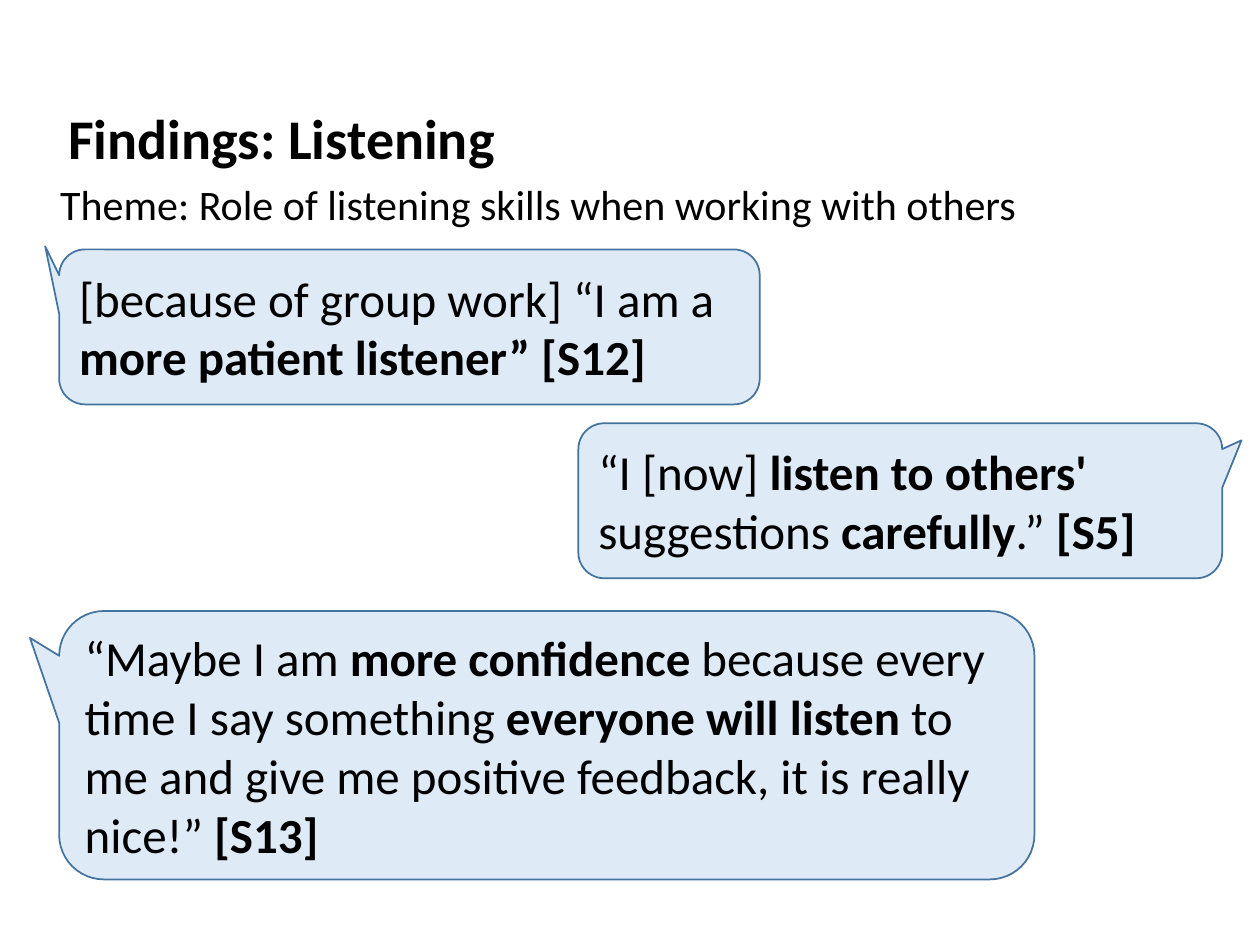
import dataclasses

import pptx
import pptx.dml.color
import pptx.enum.shapes
import pptx.enum.text
import pptx.util

Pt = pptx.util.Pt
RGB = pptx.dml.color.RGBColor.from_string
ANCHOR = pptx.enum.text.MSO_ANCHOR


@dataclasses.dataclass(frozen=True)
class Theme:
    """Colours, font and type sizes of the slide."""
    font: str = "Calibri"
    ink: str = "000000"
    fill: str = "DEEBF7"
    line: str = "43739E"
    title: int = 32
    topic: int = 24
    quote: int = 28


THEME = Theme()


def write(frame, runs, size, anchor=ANCHOR.TOP):
    """Fill a frame with one left-aligned paragraph of (text, bold) runs."""
    frame.word_wrap = True
    frame.vertical_anchor = anchor
    para = frame.paragraphs[0]
    para.alignment = pptx.enum.text.PP_ALIGN.LEFT
    for text, bold in runs:
        run = para.add_run()
        run.text = text
        run.font.name = THEME.font
        run.font.size = Pt(size)
        run.font.bold = bold
        run.font.color.rgb = RGB(THEME.ink)
    return para


def add_title(slide, box):
    """Place the slide title, set in a little from its box."""
    frame = slide.shapes.add_textbox(*map(Pt, box)).text_frame
    frame.margin_left = Pt(14.4)
    frame.margin_top = Pt(5)
    write(frame, [("Findings: Listening", True)], THEME.title)


def add_topic(slide, box):
    """Place the line that names the theme."""
    frame = slide.shapes.add_textbox(*map(Pt, box)).text_frame
    text = "Theme: Role of listening skills when working with others"
    write(frame, [(text, False)], THEME.topic).line_spacing = 0.9


def add_quote(slide, box, tip, runs):
    """Place a speech bubble whose tail ends at tip, relative to its centre."""
    kind = pptx.enum.shapes.MSO_SHAPE.ROUNDED_RECTANGULAR_CALLOUT
    bubble = slide.shapes.add_shape(kind, *map(Pt, box))
    bubble.shadow.inherit = False
    for index, value in enumerate(tip):
        bubble.adjustments[index] = value
    bubble.fill.solid()
    bubble.fill.fore_color.rgb = RGB(THEME.fill)
    bubble.line.color.rgb = RGB(THEME.line)
    bubble.line.width = Pt(1)
    write(bubble.text_frame, runs, THEME.quote, ANCHOR.MIDDLE)


QUOTES = [
    ((33.84, 142.56, 400.32, 88.56), (-0.52, -0.52), [
        ("[because of group work] “I am a ", False),
        ("more patient listener” [S12]", True),
    ]),
    ((330.48, 241.92, 367.92, 88.56), (0.53, -0.39), [
        ("“I [now] ", False),
        ("listen to others' ", True),
        ("suggestions ", False),
        ("carefully", True),
        (".” ", False),
        ("[S5]", True),
    ]),
    ((33.84, 349.2, 557.28, 153.36), (-0.53, -0.4), [
        ("“Maybe I am ", False),
        ("more confidence ", True),
        ("because every time I say something ", False),
        ("everyone will listen ", True),
        ("to me and give me positive feedback, it is really nice!” ", False),
        ("[S13]", True),
    ]),
]


def main():
    """Build the slide and save it."""
    deck = pptx.Presentation()
    deck.slide_width, deck.slide_height = Pt(720), Pt(540)
    slide = deck.slides.add_slide(deck.slide_layouts[6])
    add_title(slide, (24.48, 54, 537.12, 65.52))
    add_topic(slide, (27.36, 101.52, 672.48, 368.64))
    for box, tip, runs in QUOTES:
        add_quote(slide, box, tip, runs)
    deck.save("out.pptx")


if __name__ == "__main__":
    main()
